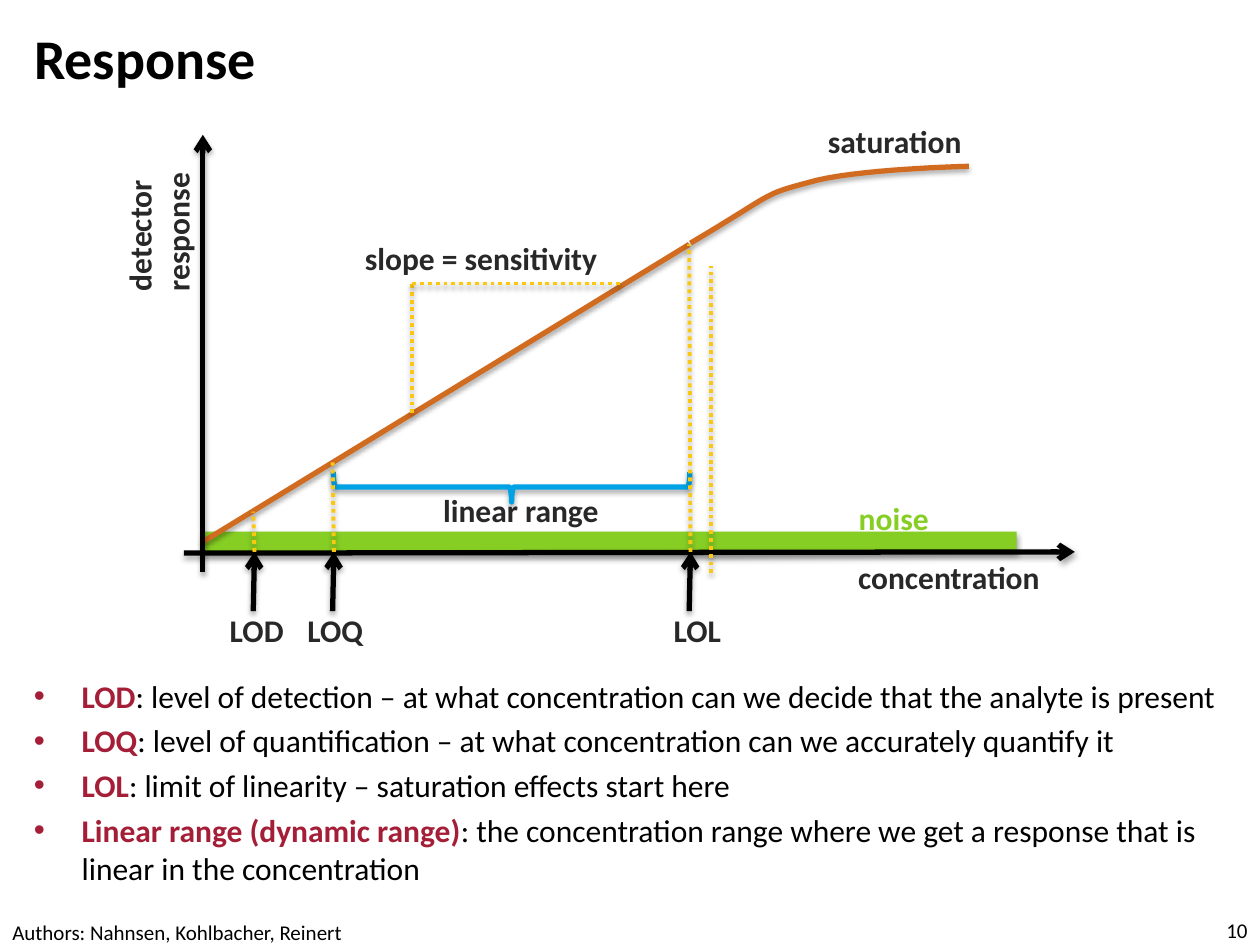
from pptx import Presentation
from pptx.util import Inches, Pt
from pptx.dml.color import RGBColor
from pptx.enum import dml, shapes, text
from pptx.oxml import parse_xml
from pptx.oxml.ns import nsdecls, qn

COLORS = dict(black="000000", label="282828", term="A51E37", curve="D06B20",
              guide="FAC810", noise="86CE24", brace="00A2E6")
LEFT, CENTER, RIGHT = text.PP_ALIGN.LEFT, text.PP_ALIGN.CENTER, text.PP_ALIGN.RIGHT

# Content
TITLE = "Response"
DEFINITIONS = [
    ("LOD", ": level of detection – at what concentration can we decide that the analyte is present"),
    ("LOQ", ": level of quantification – at what concentration can we accurately quantify it"),
    ("LOL", ": limit of linearity – saturation effects start here"),
    ("Linear range (dynamic range)",
     ": the concentration range where we get a response that is linear in the concentration"),
]
# Diagram labels: lines, box, colour, rotation
LABELS = [
    (["detector ", "response"], (0.68, 1.5, 1.16, 0.71), "label", 270),
    (["concentration"], (6.68, 4.38, 1.67, 0.4), "label", 0),
    (["saturation"], (6.45, 0.92, 1.28, 0.4), "label", 0),
    (["LOD"], (1.71, 4.8, 0.64, 0.4), "label", 0),
    (["LOQ"], (2.32, 4.8, 0.66, 0.4), "label", 0),
    (["LOL"], (5.23, 4.8, 0.59, 0.4), "label", 0),
    (["linear range"], (3.39, 3.85, 1.46, 0.4), "label", 0),
    (["slope = sensitivity"], (2.77, 1.85, 2.07, 0.4), "label", 0),
    (["noise"], (6.71, 3.91, 0.76, 0.4), "noise", 0),
]
AXIS_Y = 4.38
AXES = [(1.61, 4.54, 1.61, 1.07), (1.46, 4.39, 8.53, AXIS_Y)]
LIMITS = [(2.01, 4.06), (2.64, 3.67), (5.47, 1.94)]  # x, top of its guide
SLOPE_GUIDES = [(3.27, 3.28, 3.27, 2.25), (4.92, 2.25, 3.27, 2.25)]
EXTRA_GUIDE = (5.64, 4.55, 5.64, 2.11)
LINEAR_PART = (1.61, 4.3, 5.47, 1.94)
SATURATION = [  # Bezier segments
    [(5.48, 1.93), (6.17, 1.52), (6.04, 1.55), (6.41, 1.45)],
    [(6.41, 1.45), (6.77, 1.34), (7.69, 1.32), (7.69, 1.32)],
]

prs = Presentation()
prs.slide_width, prs.slide_height = Inches(10), Inches(7.5)
s = prs.slides.add_slide(prs.slide_layouts[5])


def rgb(name):
    return RGBColor.from_string(COLORS[name])


def add_shadow(sp, alpha=35):
    pr = sp._element.spPr
    for old in pr.findall(qn("a:effectLst")):
        pr.remove(old)
    pr.append(parse_xml(
        f'<a:effectLst {nsdecls("a")}><a:outerShdw blurRad="{Pt(3.1)}" dist="{Pt(1.8)}" '
        f'dir="5400000" rotWithShape="0"><a:srgbClr val="000000">'
        f'<a:alpha val="{alpha * 1000}"/></a:srgbClr></a:outerShdw></a:effectLst>'))


def style_line(sp, color, width=3):
    sp.line.color.rgb, sp.line.width = rgb(color), Pt(width)


def add_line(ends, color, width=3, arrow=False, dotted=False):
    sp = s.shapes.add_connector(shapes.MSO_CONNECTOR.STRAIGHT, *map(Inches, ends))
    style_line(sp, color, width)
    if dotted:
        sp.line.dash_style = dml.MSO_LINE.ROUND_DOT
    if arrow:
        sp.line._get_or_add_ln().append(parse_xml(f'<a:tailEnd {nsdecls("a")} type="arrow"/>'))
    add_shadow(sp)


def add_guide(ends):
    add_line(ends, "guide", 2.25, dotted=True)


def add_run(p, words, size, color="black", bold=False):
    r = p.add_run()
    r.text = words
    r.font.name, r.font.size, r.font.bold = "Calibri", Pt(size), bold
    r.font.color.rgb = rgb(color)


def add_text(box, paragraphs, size, align=LEFT, wrap=True, anchor=text.MSO_ANCHOR.TOP):
    """Each paragraph is a list of (words, colour, bold) runs."""
    sp = s.shapes.add_textbox(*map(Inches, box))
    tf = sp.text_frame
    tf.word_wrap, tf.vertical_anchor = wrap, anchor
    for i, runs in enumerate(paragraphs):
        p = tf.paragraphs[0] if i == 0 else tf.add_paragraph()
        p.alignment = align
        for words, color, bold in runs:
            add_run(p, words, size, color, bold)
    return sp


def bezier(points, t):
    weights = ((1 - t) ** 3, 3 * t * (1 - t) ** 2, 3 * t * t * (1 - t), t ** 3)
    return tuple(Inches(sum(w * p[k] for w, p in zip(weights, points))) for k in (0, 1))


# Title
title = s.shapes.title
title.left, title.top, title.width, title.height = map(Inches, (0.17, 0.08, 7.33, 0.75))
title.text_frame.vertical_anchor = text.MSO_ANCHOR.MIDDLE
p = title.text_frame.paragraphs[0]
p.alignment = LEFT
add_run(p, TITLE, 32, bold=True)

# Linear range brace and noise band
brace = s.shapes.add_shape(shapes.MSO_SHAPE.RIGHT_BRACE, *map(Inches, (3.94, 2.45, 0.24, 2.83)))
brace.rotation = 90
brace.fill.background()
style_line(brace, "brace")
add_shadow(brace)
noise = s.shapes.add_shape(shapes.MSO_SHAPE.RECTANGLE, *map(Inches, (1.61, 4.22, 6.46, 0.16)))
noise.fill.solid()
noise.fill.fore_color.rgb = rgb("noise")
noise.line.fill.background()
add_shadow(noise, 38)

# Response curve
add_line(LINEAR_PART, "curve")
STEPS = 16
points = [bezier(seg, i / STEPS) for seg in SATURATION for i in range(STEPS + 1)]
fb = s.shapes.build_freeform(*points[0])
fb.add_line_segments(points[1:], close=False)
curve = fb.convert_to_shape()
curve.fill.background()
style_line(curve, "curve")
add_shadow(curve)

# Axes, limit arrows and guides
for ends in AXES:
    add_line(ends, "black", arrow=True)
for x, top in LIMITS:
    add_guide((x + 0.01, AXIS_Y, x, top))
    add_line((x, 4.85, x + 0.01, AXIS_Y), "black", arrow=True)
for ends in SLOPE_GUIDES + [EXTRA_GUIDE]:
    add_guide(ends)

# Diagram labels
for lines, box, color, rotation in LABELS:
    sp = add_text(box, [[(line, color, True)] for line in lines], 18, RIGHT, wrap=False)
    sp.rotation = rotation

# Definitions
body = add_text((0.17, 5.32, 9.66, 1.68),
                [[(term, "term", True), (meaning, "black", False)]
                 for term, meaning in DEFINITIONS], 18)
for p in body.text_frame.paragraphs:
    p.space_before = Pt(4)
    pPr = p._p.get_or_add_pPr()
    pPr.set("marL", str(Inches(0.38)))
    pPr.set("indent", str(-Inches(0.38)))
    pPr.append(parse_xml(f'<a:buFont {nsdecls("a")} typeface="Arial"/>'))
    pPr.append(parse_xml(f'<a:buChar {nsdecls("a")} char="•"/>'))

# Footer
add_text((0, 7.25, 5, 0.23), [[("Authors: Nahnsen, Kohlbacher, Reinert", "black", False)]], 12)
add_text((7.5, 7.27, 2.5, 0.23), [[("10", "black", False)]], 12, RIGHT,
         anchor=text.MSO_ANCHOR.MIDDLE)

prs.save("out.pptx")
